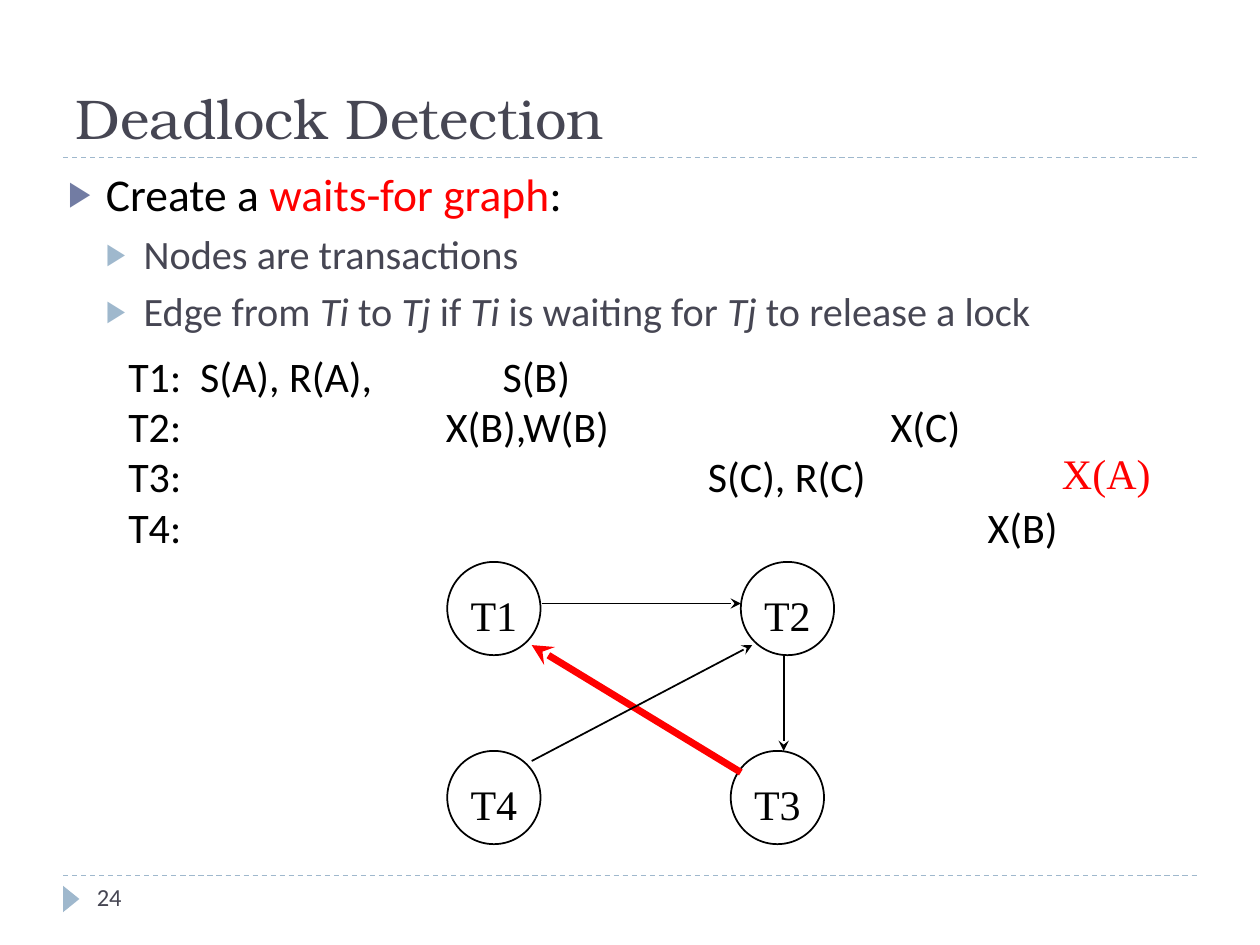
from dataclasses import dataclass

from lxml.etree import SubElement
from pptx import Presentation
from pptx.dml.color import RGBColor
from pptx.enum.dml import MSO_LINE
from pptx.enum.shapes import MSO_CONNECTOR, MSO_SHAPE
from pptx.enum.text import MSO_ANCHOR, MSO_AUTO_SIZE, PP_ALIGN
from pptx.oxml.ns import qn
from pptx.util import Inches, Pt


@dataclass(frozen=True)
class Theme:
    ink: str = "000000"
    slate: str = "464653"
    accent: str = "727CA3"
    pale: str = "9FB8CD"
    alert: str = "FF0000"
    heading: str = "TeX Gyre Bonum"
    body: str = "Calibri"
    serif: str = "Times New Roman"
    title_size: float = 32
    lead_size: float = 26
    point_size: float = 23
    label_size: float = 24
    number_size: float = 14


THEME = Theme()
COLUMNS, ROWS = 100, 75  # the slide's grid; one cell is a tenth of an inch


def cells(*counts):
    return [Inches(count * 10 / COLUMNS) for count in counts]


def assign(target, values):
    for name, value in values.items():
        setattr(target, name, value)


def add_span(para, text, font, size, color, italic=False):
    span = para.add_run()
    span.text = text
    assign(span.font, {"name": font, "size": Pt(size), "italic": italic})
    span.font.color.rgb = RGBColor.from_string(color)


def add_line(page, start, end, color, width, dashed=False, arrow=False):
    line = page.shapes.add_connector(MSO_CONNECTOR.STRAIGHT, *cells(*start, *end))
    line.line.width = Pt(width)
    line.line.color.rgb = RGBColor.from_string(color)
    if dashed:
        line.line.dash_style = MSO_LINE.DASH
    properties = line.element.find(qn("p:spPr"))
    if arrow:
        SubElement(properties.find(qn("a:ln")), qn("a:tailEnd"), type="stealth")
    SubElement(properties, qn("a:effectLst"))


def add_textbox(page, box, wrap=True):
    frame = page.shapes.add_textbox(*cells(*box)).text_frame
    frame.word_wrap = wrap
    return frame


def place(holder, box, anchor):
    for name, value in zip(("left", "top", "width", "height"), cells(*box)):
        setattr(holder, name, value)
    frame = holder.text_frame
    assign(frame, {"auto_size": MSO_AUTO_SIZE.NONE, "vertical_anchor": anchor,
                   "word_wrap": True})
    return frame


def add_bullet(para, indent, color, percent):
    properties = para._p.get_or_add_pPr()
    properties.set("marL", str(Inches(indent)))
    properties.set("indent", str(-Inches(0.3)))
    SubElement(SubElement(properties, qn("a:buClr")), qn("a:srgbClr"), val=color)
    SubElement(properties, qn("a:buSzPct"), val=str(percent * 1000))
    SubElement(properties, qn("a:buChar"), char="▶")


def build_title(page, box):
    para = place(page.shapes.title, box, MSO_ANCHOR.BOTTOM).paragraphs[0]
    para.alignment = PP_ALIGN.LEFT
    add_span(para, "Deadlock Detection", THEME.heading, THEME.title_size, THEME.slate)
    left, top, width, height = box
    rule = top + height
    add_line(page, (left, rule), (left + width, rule), THEME.pale, 0.75, dashed=True)


def build_points(page, box):
    frame = place(page.placeholders[1], box, MSO_ANCHOR.TOP)
    # Lead point, with its key term marked
    lead = frame.paragraphs[0]
    lead.space_before = Pt(6)
    add_bullet(lead, 0.3, THEME.accent, 76)
    for text, color in (("Create a ", THEME.ink), ("waits-for graph", THEME.alert),
                        (":", THEME.ink)):
        add_span(lead, text, THEME.body, THEME.lead_size, color)
    # Sub-points; every second span is italic
    for spans in (["Nodes are transactions"],
                  ["Edge from ", "Ti", " to ", "Tj", " if ", "Ti",
                   " is waiting for ", "Tj", " to release a lock"]):
        para = frame.add_paragraph()
        assign(para, {"level": 1, "space_before": Pt(5)})
        add_bullet(para, 0.6, THEME.pale, 75)
        for index, text in enumerate(spans):
            add_span(para, text, THEME.body, THEME.point_size, THEME.slate,
                     italic=index % 2 == 1)


def build_schedule(page, box):
    # Each action starts at a tab stop, in inches from the text edge
    schedule = {
        "T1:": [(0.57, "S(A), R(A),"), (2.97, "S(B)")],
        "T2:": [(2.52, "X(B),W(B)"), (6.05, "X(C)")],
        "T3:": [(4.6, "S(C), R(C)")],
        "T4:": [(6.82, "X(B)")],
    }
    frame = add_textbox(page, box)
    for index, (name, actions) in enumerate(schedule.items()):
        para = frame.add_paragraph() if index else frame.paragraphs[0]
        stops = SubElement(para._p.get_or_add_pPr(), qn("a:tabLst"))
        for stop, _ in actions:
            SubElement(stops, qn("a:tab"), pos=str(Inches(stop)), algn="l")
        text = "\t".join([name] + [action for _, action in actions])
        add_span(para, text, THEME.body, THEME.label_size, THEME.ink)
    # The request that closes the cycle
    left, top, _, _ = box
    request = add_textbox(page, (left + 74.1, top + 7.7, 9.1, 5), wrap=False)
    add_span(request.paragraphs[0], "X(A)", THEME.serif, THEME.label_size, THEME.alert)


def build_graph(page, box):
    left, top, width, height = box
    size = 7.4
    right, bottom = left + width - size, top + height - size
    nodes = {"T1": (left, top), "T2": (right, top),
             "T4": (left, bottom), "T3": (right - 0.8, bottom)}
    for name, (x, y) in nodes.items():
        node = page.shapes.add_shape(MSO_SHAPE.OVAL, *cells(x, y, size, size))
        node.shadow.inherit = False
        node.fill.background()
        node.line.width = Pt(1)
        node.line.color.rgb = RGBColor.from_string(THEME.ink)
        frame = node.text_frame
        assign(frame, {"word_wrap": False, "vertical_anchor": MSO_ANCHOR.MIDDLE,
                       "margin_top": Inches(0.1), "margin_bottom": 0})
        frame.paragraphs[0].alignment = PP_ALIGN.CENTER
        add_span(frame.paragraphs[0], name, THEME.serif, THEME.label_size, THEME.ink)
    # Waits-for edges, relative to the graph's corner; the last wait is marked
    edges = [((7.5, 3.3), (23.3, 3.3), THEME.ink, 1),
             ((26.7, 7.5), (26.7, 15), THEME.ink, 1),
             ((23.3, 16.7), (6.7, 6.6), THEME.alert, 4),
             ((6.7, 15.8), (24.2, 6.6), THEME.ink, 1)]
    for (x1, y1), (x2, y2), color, weight in edges:
        add_line(page, (left + x1, top + y1), (left + x2, top + y2), color, weight,
                 arrow=True)


def build_footer(page, box):
    left, top, width, _ = box
    add_line(page, (left, top), (left + width, top), THEME.pale, 0.75, dashed=True)
    marker = page.shapes.add_shape(MSO_SHAPE.ISOSCELES_TRIANGLE,
                                   *cells(left - 0.4, top + 1.2, 2.1, 1.3))
    assign(marker, {"rotation": 90})
    marker.shadow.inherit = False
    marker.fill.solid()
    marker.fill.fore_color.rgb = RGBColor.from_string(THEME.pale)
    marker.line.fill.background()
    number = add_textbox(page, (left + 1.7, top, 21.7, 4))
    add_span(number.paragraphs[0], "24", THEME.body, THEME.number_size, THEME.slate)


def main():
    deck = Presentation()
    assign(deck, {"slide_width": Inches(10), "slide_height": Inches(ROWS / 10)})
    page = deck.slides.add_slide(deck.slide_layouts[1])
    build_title(page, (5, 1.7, 90, 10.8))
    build_points(page, (4.4, 12.7, 90, 54))
    build_schedule(page, (9.2, 27.3, 85, 17))
    build_graph(page, (35.5, 44.6, 30.7, 22.4))
    build_footer(page, (5, 69.5, 90, 4))
    deck.save("out.pptx")


if __name__ == "__main__":
    main()
